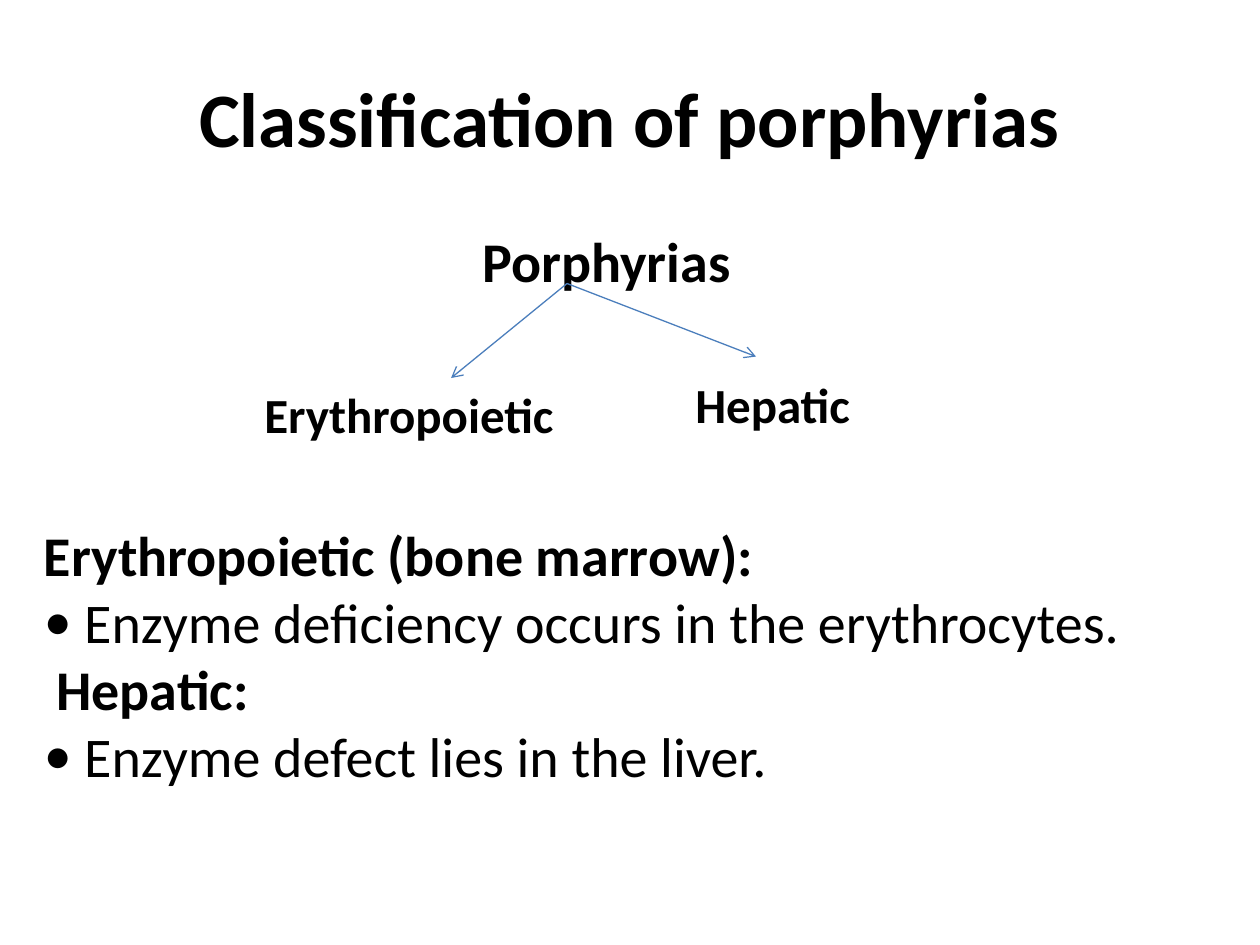
import pptx
import pptx.util
import pptx.dml.color
import pptx.enum.shapes
import pptx.enum.text
import pptx.oxml.ns
import lxml.etree

Inches, Pt = pptx.util.Inches, pptx.util.Pt
BLACK = pptx.dml.color.RGBColor(0x00, 0x00, 0x00)
BLUE = pptx.dml.color.RGBColor(0x4B, 0x7E, 0xBC)
FONT = "Calibri"
WIDTH, HEIGHT = 10, 7.5
MARGIN = WIDTH / 20


def add_run(paragraph, text, size, bold=True):
    run = paragraph.add_run()
    run.text = text
    run.font.name, run.font.size, run.font.bold = FONT, Pt(size), bold
    run.font.color.rgb = BLACK


def add_textbox(slide, left, top, width, height):
    shape = slide.shapes.add_textbox(*map(Inches, (left, top, width, height)))
    shape.text_frame.word_wrap = True
    return shape.text_frame


def add_label(slide, left, top, width, text, size):
    frame = add_textbox(slide, left, top, width, 0.57)
    add_run(frame.paragraphs[0], text, size)


def add_arrow(slide, start, end):
    connector = slide.shapes.add_connector(
        pptx.enum.shapes.MSO_CONNECTOR.STRAIGHT, *map(Inches, start + end))
    connector.line.color.rgb = BLUE
    connector.line.width = Pt(0.75)
    qn = pptx.oxml.ns.qn
    properties = connector.element.find(qn("p:spPr"))
    lxml.etree.SubElement(properties.find(qn("a:ln")), qn("a:tailEnd"), type="arrow")
    lxml.etree.SubElement(properties, qn("a:effectLst"))


def set_indent(paragraph, left, bullet=False):
    properties = paragraph._p.get_or_add_pPr()
    properties.set("marL", str(Inches(left)))
    properties.set("indent", str(-Inches(left) if bullet else 0))
    if bullet:
        qn = pptx.oxml.ns.qn
        lxml.etree.SubElement(properties, qn("a:buFont"), typeface=FONT)
        lxml.etree.SubElement(properties, qn("a:buChar"), char="•")


def build_title(slide, left, top, width, height):
    title = slide.shapes.title
    title.left, title.top, title.width, title.height = map(
        Inches, (left, top, width, height))
    title.text_frame.vertical_anchor = pptx.enum.text.MSO_ANCHOR.MIDDLE
    paragraph = title.text_frame.paragraphs[0]
    paragraph.alignment = pptx.enum.text.PP_ALIGN.CENTER
    add_run(paragraph, "Classification of porphyrias", 44)


def build_tree(slide, left, top):
    # Root with two branches
    add_label(slide, left + 1.73, top, 2.3, "Porphyrias", 32)
    add_label(slide, left, top + 1.25, 2.53, "Erythropoietic", 28)
    add_label(slide, left + 3.42, top + 1.17, 1.5, "Hepatic", 28)
    fork = (left + 2.5, top + 0.5)
    for end in ((left + 4, top + 1.08), (left + 1.58, top + 1.25)):
        add_arrow(slide, fork, end)


def build_definitions(slide, left, top, width, height):
    frame = add_textbox(slide, left, top, width, height)
    definitions = (
        ("Erythropoietic (bone marrow):", 0,
         "Enzyme deficiency occurs in the erythrocytes."),
        ("Hepatic:", 0.1, "Enzyme defect lies in the liver."),
    )
    paragraph = frame.paragraphs[0]
    for index, (heading, indent, detail) in enumerate(definitions):
        if index:
            paragraph = frame.add_paragraph()
        set_indent(paragraph, indent)
        add_run(paragraph, heading, 32)
        paragraph = frame.add_paragraph()
        set_indent(paragraph, 0.32, bullet=True)
        add_run(paragraph, detail, 32, bold=False)


def main():
    presentation = pptx.Presentation()
    presentation.slide_width = Inches(WIDTH)
    presentation.slide_height = Inches(HEIGHT)
    slide = presentation.slides.add_slide(presentation.slide_layouts[5])
    build_title(slide, MARGIN, HEIGHT * 0.04, WIDTH - 2 * MARGIN, HEIGHT / 6)
    build_tree(slide, WIDTH / 5, 1.75)
    build_definitions(slide, MARGIN / 2, 4.08, WIDTH - 2 * MARGIN, 2.26)
    presentation.save("out.pptx")


if __name__ == "__main__":
    main()
